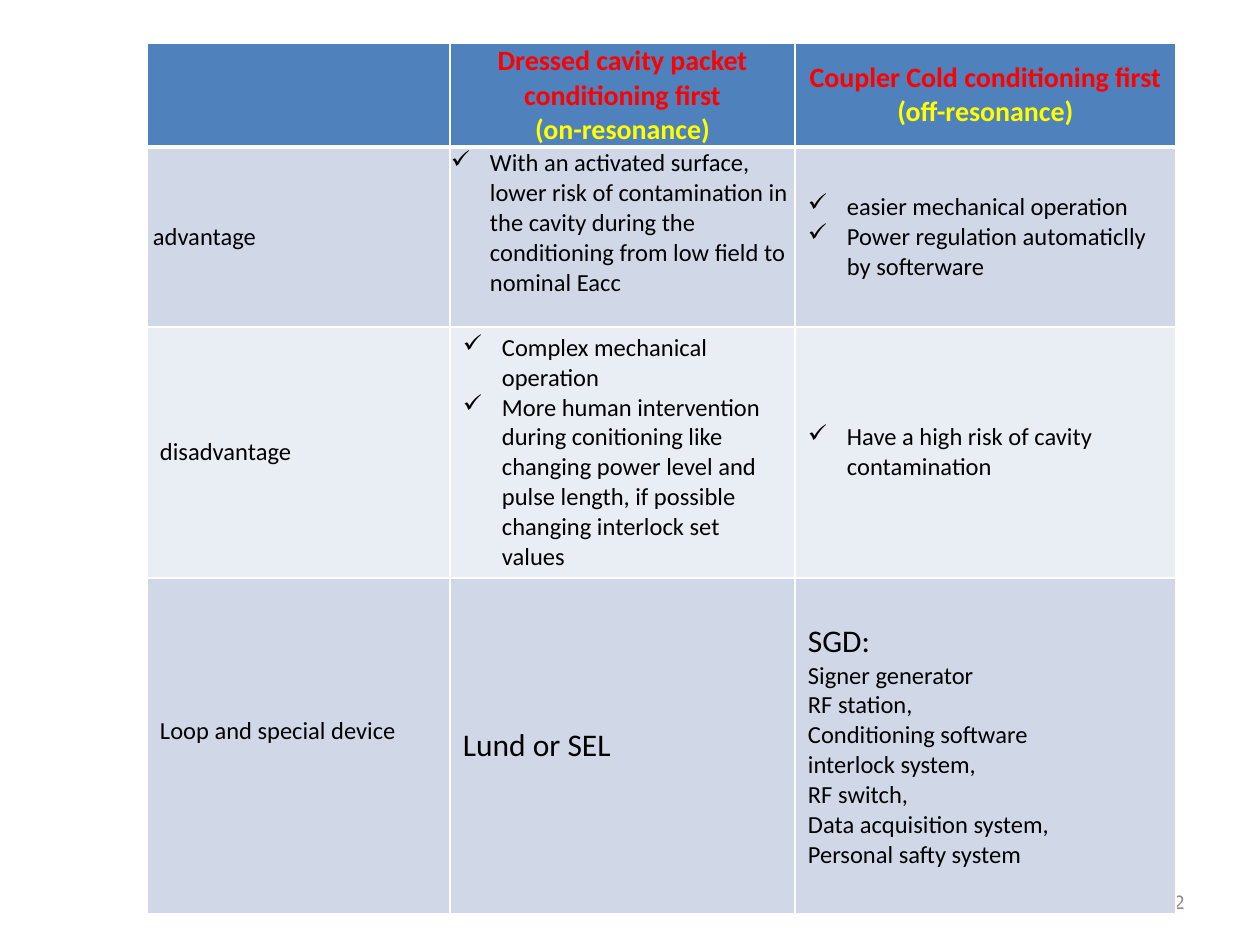
from dataclasses import dataclass

from lxml.etree import SubElement
from pptx import Presentation
from pptx.dml.color import RGBColor
from pptx.enum.text import MSO_ANCHOR as Anchor, PP_ALIGN as Align
from pptx.oxml.ns import qn
from pptx.util import Emu, Pt

EMU_PER_PX = 914400 / 126
FONT = "Calibri"

WHITE = RGBColor(0xFF, 0xFF, 0xFF)
BLACK = RGBColor(0x00, 0x00, 0x00)
RED = RGBColor(0xFF, 0x00, 0x00)
YELLOW = RGBColor(0xFF, 0xFF, 0x00)
GRAY = RGBColor(0x8C, 0x8C, 0x8C)
HEADER = RGBColor(0x4F, 0x81, 0xBD)
BAND_DARK = RGBColor(0xD0, 0xD8, 0xE8)
BAND_LIGHT = RGBColor(0xE9, 0xED, 0xF4)

COLUMNS = (303, 345, 381)
ROWS = (104, 180, 251, 336)
ROW_FILLS = (HEADER, BAND_DARK, BAND_LIGHT, BAND_DARK)
BULLET_INDENT = 39
DEFAULT_INSETS = (13, 6, 13, 6)
TIGHT_INSETS = (1, 1, 1, 0)


@dataclass(frozen=True)
class Line:
    text: str
    size: int = 14
    color: RGBColor = BLACK
    bold: bool = False
    align: Align = Align.LEFT
    bullet: bool = False


@dataclass(frozen=True)
class Entry:
    lines: tuple[Line, ...] = ()
    insets: tuple[int, int, int, int] = DEFAULT_INSETS


def px(n: int) -> Emu:
    return Emu(round(n * EMU_PER_PX))


def heading(title: str, mode: str) -> tuple[Line, ...]:
    return (Line(title, 16, RED, True, Align.CENTER),
            Line(mode, 16, YELLOW, True, Align.CENTER))


def plain(*texts: str) -> tuple[Line, ...]:
    return tuple(Line(text) for text in texts)


def checks(*texts: str) -> tuple[Line, ...]:
    return tuple(Line(text, bullet=True) for text in texts)


GRID = (
    (
        Entry(),
        Entry(heading("Dressed cavity packet conditioning first", "(on-resonance)"), TIGHT_INSETS),
        Entry(heading("Coupler Cold conditioning first", "(off-resonance)")),
    ),
    (
        Entry(plain("advantage"), (6, 1, 1, 0)),
        Entry(checks("With an activated surface, lower risk of contamination in the cavity "
                     "during the conditioning from low field to nominal Eacc"), (1, 1, 1, 29)),
        Entry(checks("easier mechanical operation",
                     "Power regulation automaticlly by softerware")),
    ),
    (
        Entry(plain("disadvantage")),
        Entry(checks("Complex mechanical operation",
                     "More human intervention during conitioning like changing power level "
                     "and pulse length, if possible changing interlock set values")),
        Entry(checks("Have a high risk of cavity contamination")),
    ),
    (
        Entry(plain("Loop and special device"), (13, 6, 13, 35)),
        Entry((Line("Lund or SEL", 18),)),
        Entry((Line("SGD:", 18),) + plain(
            "Signer generator", "RF station,", "Conditioning software", "interlock system,",
            "RF switch,", "Data acquisition system,", "Personal safty system")),
    ),
)


def write_lines(tf, lines: tuple[Line, ...]) -> None:
    tf.text = "\n".join(line.text for line in lines)
    for p, line in zip(tf.paragraphs, lines):
        p.alignment = line.align
        if line.bullet:
            pPr = p._p.get_or_add_pPr()
            pPr.set("marL", str(px(BULLET_INDENT)))
            pPr.set("indent", str(-px(BULLET_INDENT)))
            SubElement(pPr, qn("a:buChar"), char="✓")
        for r in p.runs:
            r.font.name = FONT
            r.font.size = Pt(line.size)
            r.font.bold = line.bold
            r.font.color.rgb = line.color


def add_borders(cell, top: int, bottom: int) -> None:
    tcPr = cell._tc.get_or_add_tcPr()
    for side, width in (("L", 1), ("R", 1), ("T", top), ("B", bottom)):
        ln = SubElement(tcPr, qn(f"a:ln{side}"), w=str(Pt(width)))
        fill = SubElement(ln, qn("a:solidFill"))
        SubElement(fill, qn("a:srgbClr"), val=str(WHITE))


def fill_cell(cell, entry: Entry, row: int) -> None:
    add_borders(cell, top=3 if row == 1 else 1, bottom=3 if row == 0 else 1)
    cell.fill.solid()
    cell.fill.fore_color.rgb = ROW_FILLS[row]
    cell.vertical_anchor = Anchor.MIDDLE
    (cell.margin_left, cell.margin_top,
     cell.margin_right, cell.margin_bottom) = map(px, entry.insets)
    if entry.lines:
        write_lines(cell.text_frame, entry.lines)


def add_comparison(slide) -> None:
    frame = slide.shapes.add_table(len(ROWS), len(COLUMNS), px(147), px(43),
                                   px(sum(COLUMNS)), px(sum(ROWS)))
    table = frame.table
    table.horz_banding = False
    for column, width in zip(table.columns, COLUMNS):
        column.width = px(width)
    for i, (height, entries) in enumerate(zip(ROWS, GRID)):
        table.rows[i].height = px(height)
        for j, entry in enumerate(entries):
            fill_cell(table.cell(i, j), entry, i)


def add_page_number(slide) -> None:
    tf = slide.shapes.add_textbox(px(903), px(876), px(294), px(50)).text_frame
    tf.word_wrap = True
    tf.vertical_anchor = Anchor.MIDDLE
    write_lines(tf, (Line("2", 12, GRAY, align=Align.RIGHT),))


def main() -> None:
    prs = Presentation()
    prs.slide_width, prs.slide_height = px(1260), px(945)
    slide = prs.slides.add_slide(prs.slide_layouts[6])
    add_page_number(slide)
    add_comparison(slide)
    prs.save("out.pptx")


if __name__ == "__main__":
    main()
